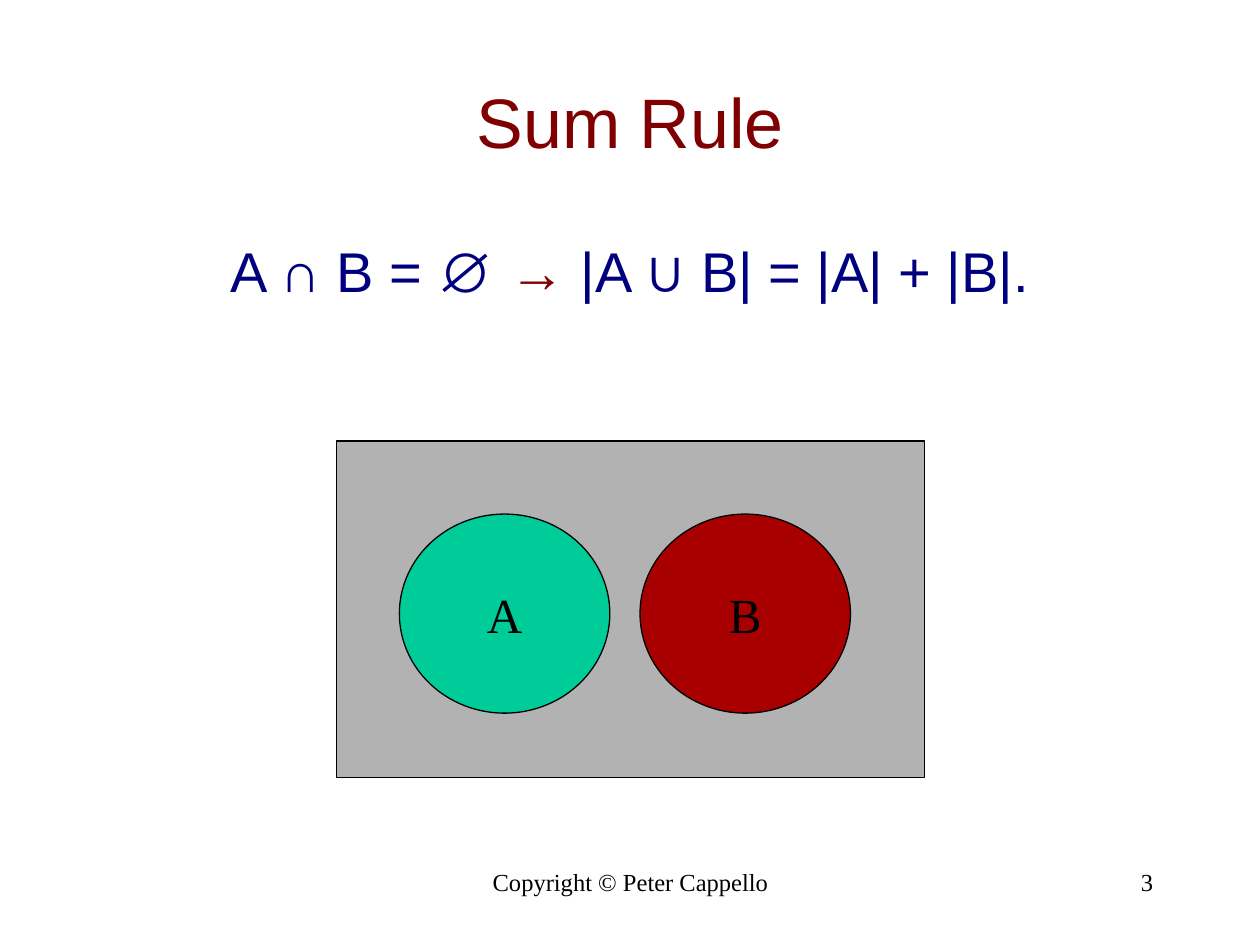
"""Build the Sum Rule slide with its diagram of two disjoint sets."""
from dataclasses import dataclass

import pptx
import pptx.dml.color
import pptx.enum.shapes
import pptx.enum.text
import pptx.util
from pptx.util import Inches

ALIGN = pptx.enum.text.PP_ALIGN
ANCHOR = pptx.enum.text.MSO_ANCHOR
SHAPE = pptx.enum.shapes.MSO_SHAPE


@dataclass(frozen=True)
class Theme:
    """Colours, fonts and type sizes of the slide."""
    red: str = "7F0000"
    navy: str = "00007F"
    black: str = "000000"
    universe: str = "B2B2B2"
    set_a: str = "00CC99"
    set_b: str = "A80000"
    sans: str = "Arial"
    serif: str = "Times New Roman"
    title: int = 40
    body: int = 32
    label: int = 28
    footer: int = 14


T = Theme()


def rgb(value):
    """Turn a hex string into a colour."""
    return pptx.dml.color.RGBColor.from_string(value)


def style(p, font, size, color, align=ALIGN.CENTER):
    """Set the font and alignment of a paragraph."""
    p.alignment = align
    p.font.name = font
    p.font.size = pptx.util.Pt(size)
    p.font.color.rgb = rgb(color)


def add_text(s, box, text, font, size, color, align=ALIGN.CENTER, anchor=ANCHOR.TOP):
    """Add a wrapped one-paragraph text box and return its paragraph."""
    tf = s.shapes.add_textbox(*map(Inches, box)).text_frame
    tf.word_wrap = True
    tf.vertical_anchor = anchor
    p = tf.paragraphs[0]
    p.text = text
    style(p, font, size, color, align)
    return p


def add_formula(s, box, parts):
    """Add the formula from (text, bold, colour) parts."""
    p = add_text(s, box, "", T.sans, T.body, T.navy)
    p.space_before = pptx.util.Pt(0.2 * T.body)
    for text, bold, color in parts:
        r = p.add_run()
        r.text = text
        r.font.bold = bold
        r.font.color.rgb = rgb(color)


def add_region(s, kind, box, fill, label=""):
    """Add an outlined region of the diagram with an optional label."""
    sp = s.shapes.add_shape(kind, *map(Inches, box))
    sp.shadow.inherit = False
    sp.fill.solid()
    sp.fill.fore_color.rgb = rgb(fill)
    sp.line.color.rgb = rgb(T.black)
    sp.line.width = pptx.util.Pt(0.75)
    if label:
        tf = sp.text_frame
        tf.word_wrap = False
        tf.vertical_anchor = ANCHOR.MIDDLE
        p = tf.paragraphs[0]
        p.text = label
        style(p, T.serif, T.label, T.black)


def main():
    """Build and save the slide."""
    prs = pptx.Presentation()
    prs.slide_width, prs.slide_height = Inches(10), Inches(7.5)
    s = prs.slides.add_slide(prs.slide_layouts[6])
    add_text(s, (3.42, 6.83, 3.17, 0.5), "Copyright © Peter Cappello",
             T.serif, T.footer, T.black)
    add_text(s, (7.17, 6.83, 2.08, 0.5), "3", T.serif, T.footer, T.black, ALIGN.RIGHT)
    add_text(s, (0.75, 0.33, 8.5, 1.25), "Sum Rule",
             T.sans, T.title, T.red, anchor=ANCHOR.MIDDLE)
    add_formula(s, (0.75, 1.83, 8.5, 4.83), [
        ("A ", False, T.navy),
        ("∩ ", True, T.navy),
        ("B = ", False, T.navy),
        ("∅ ", True, T.navy),
        ("→ ", True, T.red),
        ("|A ", False, T.navy),
        ("∪ ", True, T.navy),
        ("B| = |A| + |B|.", False, T.navy),
    ])
    add_region(s, SHAPE.RECTANGLE, (2.67, 3.5, 4.67, 2.67), T.universe)
    for left, fill, label in ((3.17, T.set_a, "A"), (5.08, T.set_b, "B")):
        add_region(s, SHAPE.OVAL, (left, 4.08, 1.67, 1.58), fill, label)
    prs.save("out.pptx")


if __name__ == "__main__":
    main()
